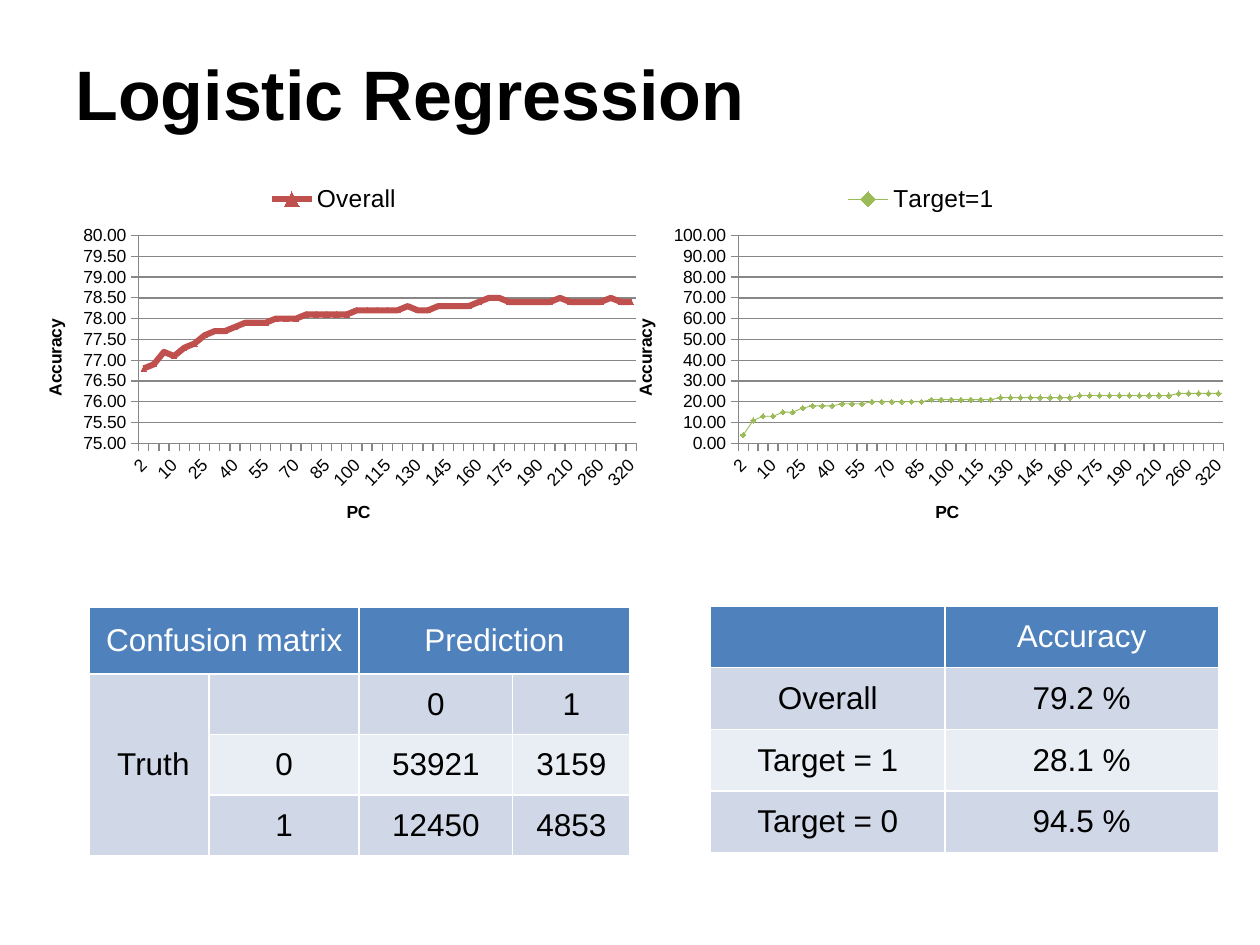
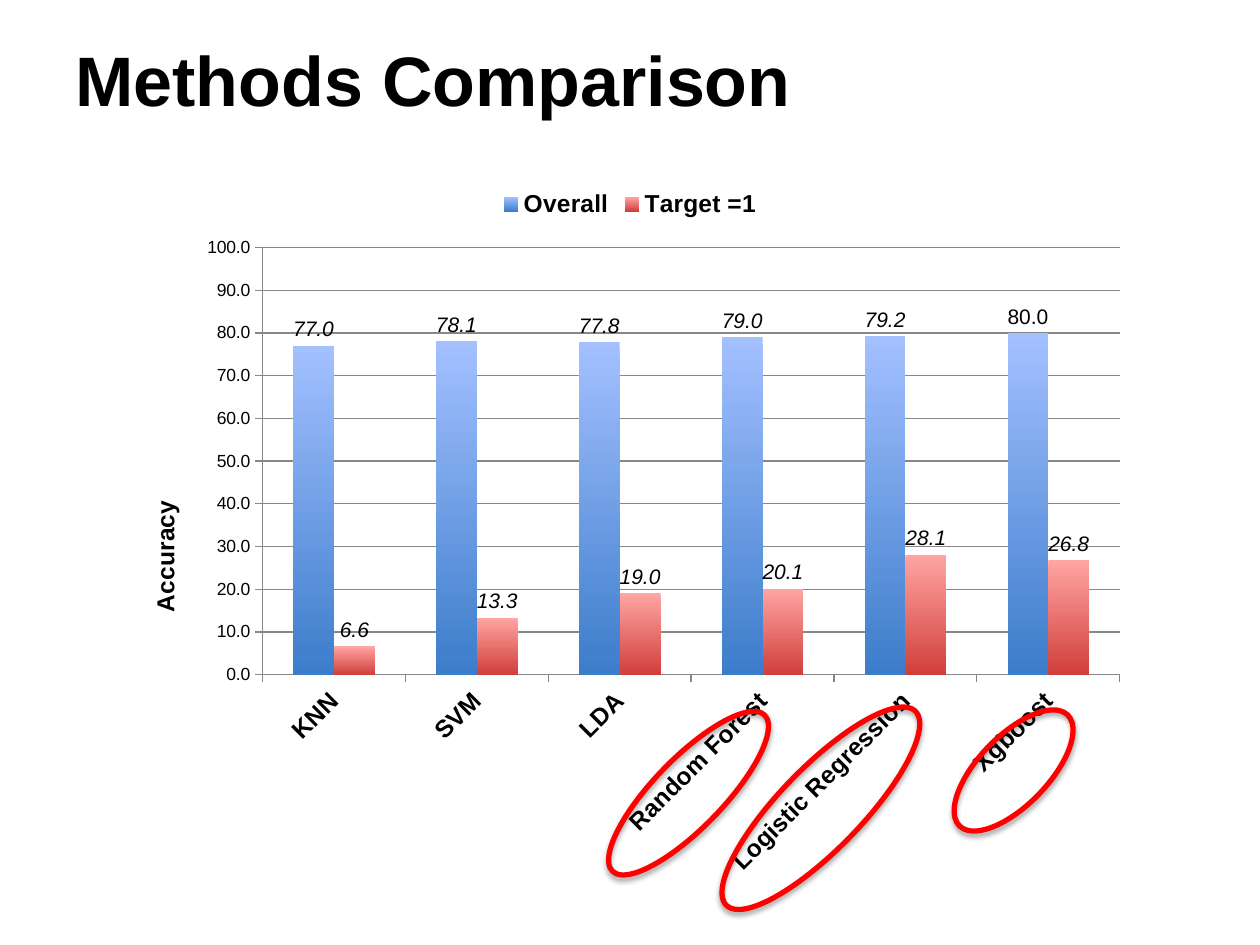
from pptx import Presentation
from pptx.chart.data import CategoryChartData
from pptx.dml.color import RGBColor
from pptx.enum.chart import XL_CHART_TYPE as ChartType
from pptx.enum.chart import XL_LABEL_POSITION as LabelPosition
from pptx.enum.chart import XL_LEGEND_POSITION as LegendPosition
from pptx.enum.chart import XL_MARKER_STYLE as Marker
from pptx.enum.chart import XL_TICK_MARK as TickMark
from pptx.enum.shapes import MSO_SHAPE as Shape
from pptx.enum.text import MSO_ANCHOR as Anchor
from pptx.enum.text import PP_ALIGN as Align
from pptx.oxml import parse_xml
from pptx.oxml.ns import nsdecls, qn
from pptx.util import Inches, Pt

FONT = "Arial"
BLACK, WHITE, GRAY = "000000", "FFFFFF", "878787"
RED, GREEN, RING_RED = "C0504D", "9BBB59", "FF0000"
ROW_FILLS = ["4F81BD", "D0D8E8", "E9EDF4", "D0D8E8"]


def paint(fill, color):
    fill.solid()
    fill.fore_color.rgb = RGBColor.from_string(color)


def add_accuracy_chart(slide, kind, place, plot_area, categories, series,
                       scale, number_format, category_title=None, heading_size=10):
    """Add a chart with the shared axes, grid and top legend."""
    data = CategoryChartData(number_format=number_format)
    data.categories = categories
    for name, values in series.items():
        data.add_series(name, values)
    chart = slide.shapes.add_chart(kind, *map(Inches, place), data).chart
    chart.has_title = False
    chart.font.name, chart.font.size = FONT, Pt(10)
    paint(chart.font.fill, BLACK)

    chart.has_legend = True
    chart.legend.position = LegendPosition.TOP
    chart.legend.include_in_layout = False
    chart.legend.font.size = Pt(14)

    # Axes
    category_axis, value_axis = chart.category_axis, chart.value_axis
    value_axis.minimum_scale, value_axis.maximum_scale, value_axis.major_unit = scale
    value_axis.tick_labels.number_format = number_format
    value_axis.tick_labels.number_format_is_linked = False
    value_axis.has_major_gridlines = True
    grid_line = value_axis.major_gridlines.format.line
    for line in (grid_line, value_axis.format.line, category_axis.format.line):
        paint(line.fill, GRAY)
        line.width = Pt(0.75)
    category_axis.tick_labels.font.size = Pt(heading_size)
    label_body = category_axis._element.find(qn("c:txPr")).find(qn("a:bodyPr"))
    label_body.set("rot", str(-45 * 60000))

    for axis, title, turn in ((category_axis, category_title, 0),
                              (value_axis, "Accuracy", -90)):
        axis.major_tick_mark = TickMark.OUTSIDE
        axis.minor_tick_mark = TickMark.NONE
        if title:
            frame = axis.axis_title.text_frame
            frame.text = title
            frame._txBody.bodyPr.set("rot", str(turn * 60000))
            font = frame.paragraphs[0].runs[0].font
            font.name, font.size, font.bold = FONT, Pt(heading_size), True

    # Inner plot area, as fractions of the chart
    plot = chart._chartSpace.chart.plotArea
    for layout in plot.findall(qn("c:layout")):
        plot.remove(layout)
    sizes = "".join(f'<c:{key} val="{value}"/>' for key, value in zip("xywh", plot_area))
    plot.insert(0, parse_xml(
        f'<c:layout {nsdecls("c")}><c:manualLayout><c:layoutTarget val="inner"/>'
        f'<c:xMode val="edge"/><c:yMode val="edge"/>{sizes}</c:manualLayout></c:layout>'))
    return chart


deck = Presentation()
deck.slide_width, deck.slide_height = Inches(10), Inches(7.5)

# Slides and their titles
slides = []
for heading, top in (("Logistic Regression", 0.11), ("Methods Comparison", 0)):
    slide = deck.slides.add_slide(deck.slide_layouts[5])
    title = slide.shapes.title
    title.left, title.top = Inches(0.5), Inches(top)
    title.width, title.height = Inches(9), Inches(1.25)
    title.text_frame.text = heading
    title.text_frame.vertical_anchor = Anchor.MIDDLE
    para = title.text_frame.paragraphs[0]
    para.alignment = Align.LEFT
    font = para.runs[0].font
    font.name, font.size, font.bold = FONT, Pt(40), True
    paint(font.fill, BLACK)
    slides.append(slide)
regression, comparison = slides

# Accuracy by number of principal components
components = [str(n) for n in (2, 3, *range(5, 201, 5), 210, *range(220, 321, 20))]
overall = [
    76.8, 76.9, 77.2, 77.1, 77.3, 77.4, 77.6, 77.7, 77.7, 77.8, 77.9, 77.9, 77.9,
    78, 78, 78, 78.1, 78.1, 78.1, 78.1, 78.1, 78.2, 78.2, 78.2, 78.2, 78.2, 78.3,
    78.2, 78.2, 78.3, 78.3, 78.3, 78.3, 78.4, 78.5, 78.5, 78.4, 78.4, 78.4, 78.4,
    78.4, 78.5, 78.4, 78.4, 78.4, 78.4, 78.5, 78.4, 78.4]
target = [
    4, 11, 13, 13, 15, 15, 17, 18, 18, 18, 19, 19, 19, 20, 20, 20, 20, 20, 20,
    21, 21, 21, 21, 21, 21, 21, 22, 22, 22, 22, 22, 22, 22, 22, 23, 23, 23, 23,
    23, 23, 23, 23, 23, 23, 24, 24, 24, 24, 24]
line_charts = [
    ("Overall", overall, 0.15, (0.19, 0.17, 0.79, 0.55), (75, 80, 0.5),
     RED, 3.5, Marker.TRIANGLE),
    ("Target=1", target, 4.81, (0.21, 0.17, 0.77, 0.55), (0, 100, 10),
     GREEN, 0.5, Marker.DIAMOND)]
for name, values, left, plot_area, scale, color, width, marker in line_charts:
    chart = add_accuracy_chart(
        regression, ChartType.LINE_MARKERS, (left, 1.36, 5, 3), plot_area,
        components, {name: values}, scale, "0.00", category_title="PC ")
    curve = chart.plots[0].series[0]
    curve.smooth = False
    paint(curve.format.line.fill, color)
    curve.format.line.width = Pt(width)
    curve.marker.style, curve.marker.size = marker, 3
    paint(curve.marker.format.fill, color)
    paint(curve.marker.format.line.fill, color)
    chart.plots[0].vary_by_categories = False

# Accuracy table and confusion matrix; merges are (first cell, last cell)
tables = [
    ((5.64, 4.81), [1.86, 2.17], [0.49] * 4, [],
     [["", "Accuracy"], ["Overall", "79.2 %"],
      ["Target = 1", "28.1 %"], ["Target = 0", "94.5 %"]]),
    ((0.71, 4.82), [0.95, 1.19, 1.22, 0.93], [0.53] + [0.48] * 3,
     [((0, 0), (0, 1)), ((0, 2), (0, 3)), ((1, 0), (3, 0))],
     [["Confusion matrix", "", "Prediction", ""], [" Truth", "", "0", "1"],
      ["", "0", "53921", "3159"], ["", "1", "12450", "4853"]])]
for (left, top), widths, heights, merges, texts in tables:
    table = regression.shapes.add_table(
        len(heights), len(widths), Inches(left), Inches(top),
        Inches(sum(widths)), Inches(sum(heights))).table
    for column, width in zip(table.columns, widths):
        column.width = Inches(width)
    for row, height in zip(table.rows, heights):
        row.height = Inches(height)
    for first, last in merges:
        table.cell(*first).merge(table.cell(*last))
    for row, row_texts, row_fill in zip(table.rows, texts, ROW_FILLS):
        for cell, text in zip(row.cells, row_texts):
            paint(cell.fill, row_fill)
            cell.vertical_anchor = Anchor.MIDDLE
            cell.text_frame.text = text
            para = cell.text_frame.paragraphs[0]
            para.alignment = Align.CENTER
            para.font.size = Pt(18)
            for span in para.runs:
                span.font.name, span.font.size, span.font.bold = FONT, Pt(18), False
                paint(span.font.fill, WHITE if row_texts is texts[0] else BLACK)

# Accuracy by method
methods = ["KNN", "SVM", "LDA", "Random Forest", "Logistic Regression", "Xgboost"]
scores = {"Overall": [77, 78.1, 77.8, 79, 79.2, 80],
          "Target =1": [6.6, 13.3, 19, 20.1, 28.1, 26.8]}
chart = add_accuracy_chart(
    comparison, ChartType.COLUMN_CLUSTERED, (0.95, 1.4, 8.1, 5.65),
    (0.14, 0.1, 0.84, 0.6), methods, scores, (0, 100, 10), "0.0", heading_size=14)
chart.legend.font.bold = True
chart.category_axis.tick_labels.font.bold = True
columns = chart.plots[0]
columns.gap_width, columns.overlap, columns.vary_by_categories = 150, 0, False
gradients = [("A3C0FF", "3C7DCB"), ("FFA5A2", "D13F3B")]
for bars, gradient in zip(columns.series, gradients):
    fill = bars.format.fill
    fill.gradient()
    fill.gradient_angle = 270
    for stop, color in zip(fill.gradient_stops, gradient):
        stop.color.rgb = RGBColor.from_string(color)
    labels = bars.data_labels
    labels.show_value = True
    labels.position = LabelPosition.OUTSIDE_END
    labels.number_format, labels.number_format_is_linked = "0.0", False
    labels.font.size, labels.font.italic = Pt(12), True
    paint(labels.font.fill, BLACK)

# Upright label on the best overall score
best_label = columns.series[0].points[5].data_label
best_label.text_frame.text = "80.0"
best_label.position = LabelPosition.OUTSIDE_END
font = best_label.text_frame.paragraphs[0].runs[0].font
font.name, font.size, font.italic = FONT, Pt(12), False

# Rings around the three best methods
for place in ((4.6, 6.02, 1.73, 0.55), (7.43, 5.84, 1.23, 0.55), (5.44, 6.09, 2.15, 0.65)):
    ring = comparison.shapes.add_shape(Shape.OVAL, *map(Inches, place))
    ring.rotation = 314.2
    ring.fill.background()
    paint(ring.line.fill, RING_RED)
    ring.line.width = Pt(3)
    ring.shadow.inherit = False
    ring._element.spPr.find(qn("a:effectLst")).append(parse_xml(
        f'<a:outerShdw {nsdecls("a")} blurRad="{Pt(3.1)}" dist="{Pt(1.8)}" '
        f'dir="{90 * 60000}" rotWithShape="0"><a:srgbClr val="{BLACK}">'
        '<a:alpha val="35000"/></a:srgbClr></a:outerShdw>'))

deck.save("out.pptx")
